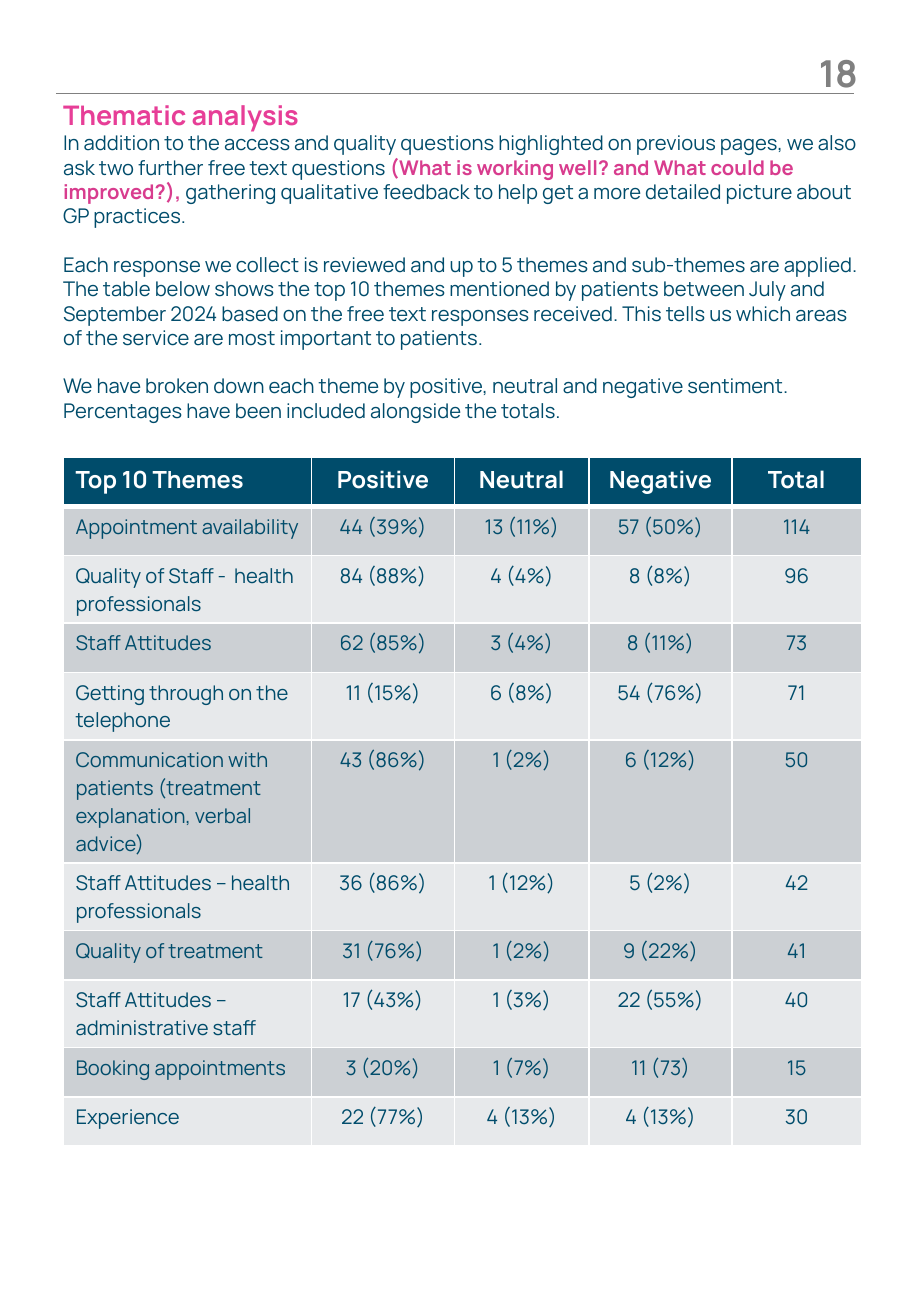
from lxml.etree import SubElement
from pptx import Presentation
from pptx.dml.color import RGBColor
from pptx.enum.shapes import MSO_CONNECTOR as Connector
from pptx.enum.text import PP_ALIGN as Align
from pptx.oxml import parse_xml
from pptx.oxml.ns import nsdecls, qn
from pptx.util import Pt

FONT = "Manrope"
COLOURS = {
    "heading": "E73E97",
    "question": "D83C8E",
    "navy": "004C6B",
    "grey": "808080",
    "white": "FFFFFF",
    "dark_band": "CCD0D4",
    "light_band": "E7E9EB",
}
BODY_SIZE = 12
LINE_SPACING = 1.0
PARAGRAPH_GAP = 14.4
COLUMN_WIDTHS = [147, 85, 79.5, 85, 76.5]
ROW_HEIGHTS = {1: 29.2, 2: 40.1, 4: 72.9}

INTRODUCTION = [
    (0, [("Thematic analysis", {"size": 16, "colour": "heading", "bold": True})]),
    (0, [
        ("In addition to the access and quality questions highlighted on previous pages, "
         "we also ask two further free text questions ", {}),
        ("(What is working well? and What could be improved?), ",
         {"colour": "question", "bold": True}),
        ("gathering qualitative feedback to help get a more detailed picture about "
         "GP practices.", {}),
    ]),
    (PARAGRAPH_GAP, [
        ("Each response we collect is reviewed and up to 5 themes and sub-themes are applied. "
         "The table below shows the top 10 themes mentioned by patients between July and "
         "September 2024 based on the free text responses received. This tells us which areas "
         "of the service are most important to patients.", {}),
    ]),
    (PARAGRAPH_GAP, [
        ("We have broken down each theme by positive, neutral and negative sentiment. "
         "Percentages have been included alongside the totals.", {}),
    ]),
]

THEMES = [
    (1, "Top 10 Themes", "Positive", "Neutral", "Negative", "Total"),
    (1, "Appointment availability", "44 (39%)", "13 (11%)", "57 (50%)", "114"),
    (2, "Quality of Staff -  health professionals", "84 (88%)", "4 (4%)", "8 (8%)", "96"),
    (1, "Staff Attitudes", "62 (85%)", "3 (4%)", "8 (11%)", "73"),
    (2, "Getting through on the telephone", "11 (15%)", "6 (8%)", "54 (76%)", "71"),
    (4, "Communication with patients (treatment explanation, verbal advice)",
     "43 (86%)", "1 (2%)", "6 (12%)", "50"),
    (2, "Staff Attitudes – health professionals", "36 (86%)", "1 (12%)", "5 (2%)", "42"),
    (1, "Quality of treatment", "31 (76%)", "1 (2%)", "9 (22%)", "41"),
    (2, "Staff Attitudes – administrative staff", "17 (43%)", "1 (3%)", "22 (55%)", "40"),
    (1, "Booking appointments", "3 (20%)", "1 (7%)", "11 (73)", "15"),
    (1, "Experience", "22 (77%)", "4 (13%)", "4 (13%)", "30"),
]


def rgb(name):
    return RGBColor.from_string(COLOURS[name])


def add_span(para, text, size=BODY_SIZE, colour="navy", bold=False):
    span = para.add_run()
    span.text = text
    span.font.name = FONT
    span.font.size = Pt(size)
    span.font.bold = bold
    span.font.color.rgb = rgb(colour)


def add_text_frame(page, left, top, width, height):
    box = page.shapes.add_textbox(Pt(left), Pt(top), Pt(width), Pt(height))
    frame = box.text_frame
    frame.word_wrap = True
    frame.margin_left = frame.margin_right = frame.margin_top = frame.margin_bottom = 0
    return frame


def add_page_header(page, left, top, width, height):
    rule_top = top + 25.2
    rule = page.shapes.add_connector(
        Connector.STRAIGHT, Pt(left), Pt(rule_top), Pt(left + width - 2.3), Pt(rule_top))
    rule.line.color.rgb = rgb("grey")
    rule.line.width = Pt(0.75)
    SubElement(rule._element.spPr, qn("a:effectLst"))
    number_width = 34
    frame = add_text_frame(page, left + width - number_width, top, number_width, height)
    para = frame.paragraphs[0]
    para.alignment = Align.RIGHT
    add_span(para, "18", size=22, colour="grey", bold=True)


def add_introduction(page, left, top, width, height):
    frame = add_text_frame(page, left, top, width, height)
    for index, (gap, spans) in enumerate(INTRODUCTION):
        para = frame.add_paragraph() if index else frame.paragraphs[0]
        para.line_spacing = LINE_SPACING
        if gap:
            para.space_before = Pt(gap)
        for text, style in spans:
            add_span(para, text, **style)


def set_borders(cell, top=1, bottom=1):
    properties = cell._tc.get_or_add_tcPr()
    widths = {"lnL": 1, "lnR": 1, "lnT": top, "lnB": bottom}
    for position, (tag, width) in enumerate(widths.items()):
        properties.insert(position, parse_xml(
            f'<a:{tag} {nsdecls("a")} w="{Pt(width)}"><a:solidFill>'
            f'<a:srgbClr val="{COLOURS["white"]}"/></a:solidFill></a:{tag}>'))


def add_theme_table(page, left, top):
    heights = [ROW_HEIGHTS[lines] for lines, *_ in THEMES]
    table = page.shapes.add_table(
        len(THEMES), len(COLUMN_WIDTHS), Pt(left), Pt(top),
        Pt(sum(COLUMN_WIDTHS)), Pt(sum(heights))).table
    for column, width in zip(table.columns, COLUMN_WIDTHS):
        column.width = Pt(width)
    for row_index, (_, *values) in enumerate(THEMES):
        table.rows[row_index].height = Pt(heights[row_index])
        is_header = row_index == 0
        band = "navy" if is_header else "dark_band" if row_index % 2 else "light_band"
        style = {"size": 14, "colour": "white", "bold": True} if is_header else {}
        for column_index, value in enumerate(values):
            cell = table.cell(row_index, column_index)
            cell.fill.solid()
            cell.fill.fore_color.rgb = rgb(band)
            set_borders(cell, top=3 if row_index == 1 else 1, bottom=3 if is_header else 1)
            para = cell.text_frame.paragraphs[0]
            para.alignment = Align.CENTER if column_index else Align.LEFT
            add_span(para, value, **style)


def main():
    deck = Presentation()
    deck.slide_width, deck.slide_height = Pt(540), Pt(780)
    page = deck.slides.add_slide(deck.slide_layouts[6])
    add_page_header(page, left=33.1, top=30.2, width=475.3, height=28)
    add_introduction(page, left=37.4, top=58.3, width=476, height=198.7)
    add_theme_table(page, left=37.6, top=270.9)
    deck.save("out.pptx")


if __name__ == "__main__":
    main()
